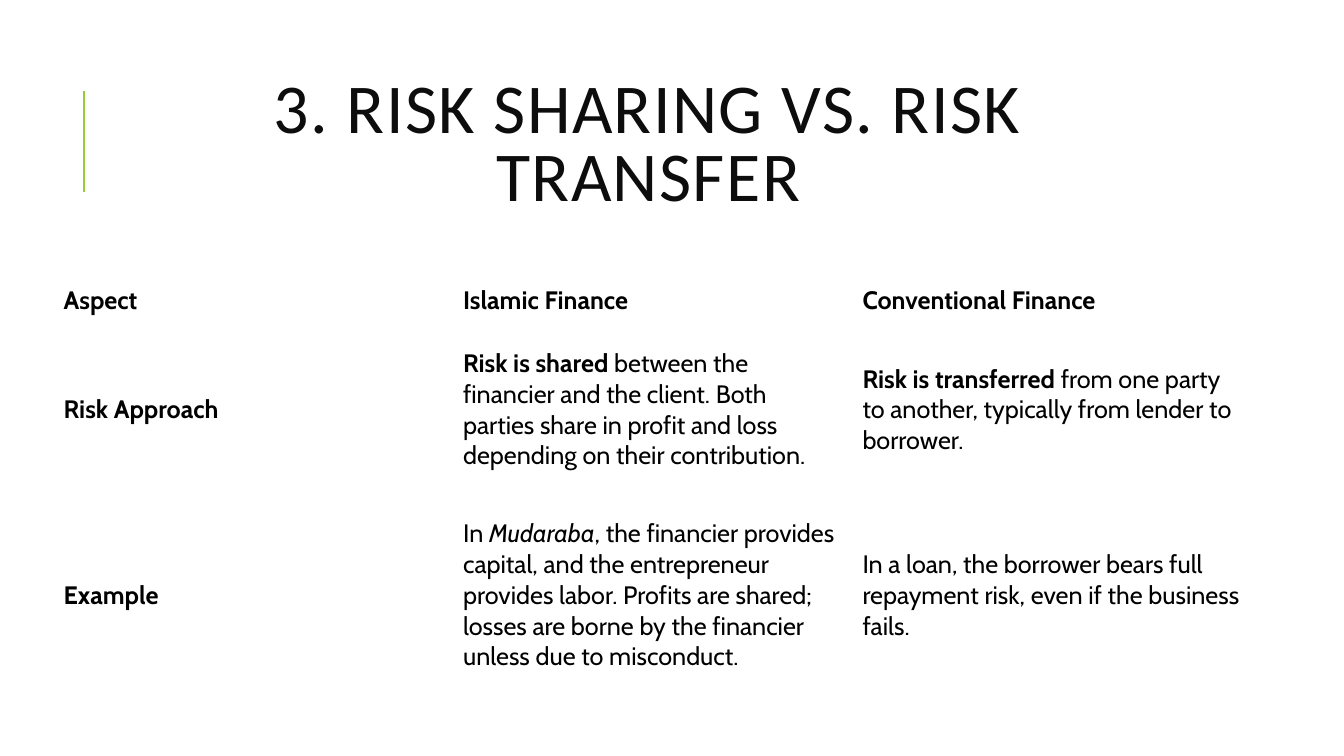
from lxml.etree import SubElement
from pptx import Presentation
from pptx.dml.color import RGBColor
from pptx.enum.shapes import MSO_CONNECTOR
from pptx.enum.text import MSO_ANCHOR, MSO_AUTO_SIZE, PP_ALIGN
from pptx.oxml.ns import qn
from pptx.util import Cm, Pt

COLORS = {"accent": "99CB38", "title": "0D0D0D", "text": "000000", "page": "FFFFFF"}
TITLE_FONT = "Calibri"
BODY_FONT = "Cabin"

ROW_HEIGHTS = [1.3, 4.19, 5.16]
# Each cell is a list of (text, format) spans.
BOLD = {"bold": True}
RISK_TABLE = [
    [
        [("Aspect", BOLD)],
        [("Islamic Finance", BOLD)],
        [("Conventional Finance", BOLD)],
    ],
    [
        [("Risk Approach", BOLD)],
        [
            ("Risk is shared", BOLD),
            (" between the financier and the client. Both parties share in "
             "profit and loss depending on their contribution.", {}),
        ],
        [
            ("Risk is transferred", BOLD),
            (" from one party to another, typically from lender to borrower.", {}),
        ],
    ],
    [
        [("Example", BOLD)],
        [
            ("In ", {}),
            ("Mudaraba", {"italic": True}),
            (", the financier provides capital, and the entrepreneur provides "
             "labor. Profits are shared; losses are borne by the financier "
             "unless due to misconduct.", {}),
        ],
        [("In a loan, the borrower bears full repayment risk, even if the "
          "business fails.", {})],
    ],
]


def color(name):
    return RGBColor.from_string(COLORS[name])


def add_span(para, text, font=BODY_FONT, size=18, fill="text",
             bold=False, italic=False, spacing=None):
    """Append formatted text; spacing is the letter spacing in points."""
    span = para.add_run()
    span.text = text
    span.font.name = font
    span.font.size = Pt(size)
    span.font.bold = bold
    span.font.italic = italic
    span.font.color.rgb = color(fill)
    if spacing is not None:
        span.font._element.set("spc", str(int(spacing * 100)))


class SlideBuilder:
    def __init__(self, deck):
        self.page = deck.slides.add_slide(deck.slide_layouts[5])
        background = self.page.background.fill
        background.solid()
        background.fore_color.rgb = color("page")

    def add_title(self, text, left, top, width, height):
        box = self.page.shapes.title
        box.left, box.top = Cm(left), Cm(top)
        box.width, box.height = Cm(width), Cm(height)
        frame = box.text_frame
        frame.word_wrap = True
        frame.auto_size = MSO_AUTO_SIZE.NONE
        frame.vertical_anchor = MSO_ANCHOR.MIDDLE
        para = frame.paragraphs[0]
        para.alignment = PP_ALIGN.CENTER
        para.line_spacing = 0.8
        add_span(para, text, font=TITLE_FONT, size=50, fill="title", spacing=1)

    def add_line(self, start, end, width=1.5):
        line = self.page.shapes.add_connector(
            MSO_CONNECTOR.STRAIGHT, *map(Cm, start + end))
        line.line.color.rgb = color("accent")
        line.line.width = Pt(width)
        SubElement(line._element.spPr, qn("a:effectLst"))

    def add_table(self, rows, heights, left, top, width):
        frame = self.page.shapes.add_table(
            len(rows), len(rows[0]), Cm(left), Cm(top), Cm(width), Cm(sum(heights)))
        table = frame.table
        table.first_row = False
        table.horz_banding = False
        for row, height in zip(table.rows, heights):
            row.height = Cm(height)
        for row, contents in zip(table.rows, rows):
            for cell, spans in zip(row.cells, contents):
                cell.fill.background()
                cell.vertical_anchor = MSO_ANCHOR.MIDDLE
                for text, style in spans:
                    add_span(cell.text_frame.paragraphs[0], text, **style)


def main():
    deck = Presentation()
    deck.slide_width, deck.slide_height = Cm(33.87), Cm(19.05)
    slide = SlideBuilder(deck)
    slide.add_line((2.11, 4.83), (2.11, 2.29))
    slide.add_title("3. RISK SHARING VS. RISK TRANSFER", 2.84, 1.63, 27, 4.17)
    slide.add_table(RISK_TABLE, ROW_HEIGHTS, left=1.35, top=6.93, width=30.2)
    deck.save("out.pptx")


if __name__ == "__main__":
    main()
